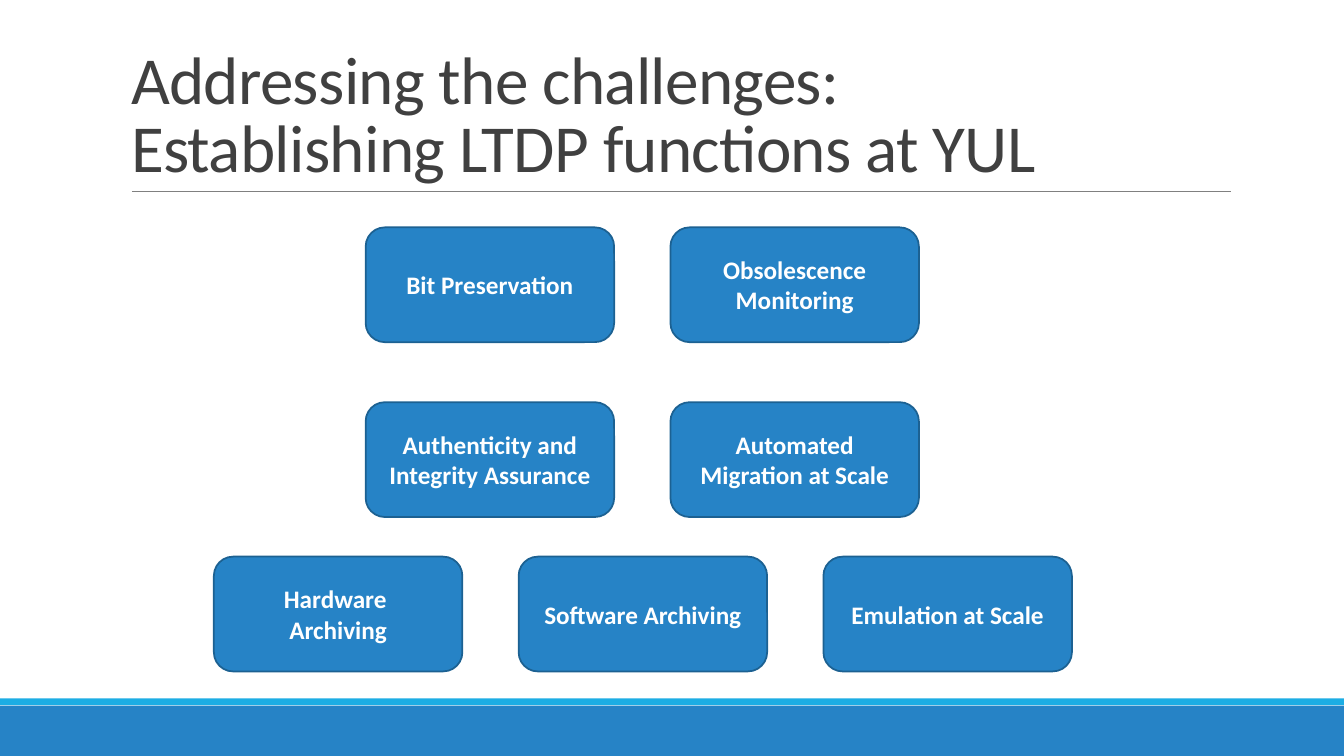
from pptx import Presentation
from pptx.dml.color import RGBColor
from pptx.enum import shapes, text
from pptx.oxml.ns import qn
from pptx.util import Pt
from lxml import etree

BLUE = RGBColor(0x26, 0x83, 0xC6)
CYAN = RGBColor(0x1C, 0xAD, 0xE4)
EDGE = RGBColor(0x1C, 0x61, 0x92)
GREY = RGBColor(0x80, 0x80, 0x80)
DARK = RGBColor(0x40, 0x40, 0x40)
WHITE = RGBColor(0xFF, 0xFF, 0xFF)


def add_filled(kind, left, top, width, height, fill):
    sp = s.shapes.add_shape(kind, Pt(left), Pt(top), Pt(width), Pt(height))
    sp.shadow.inherit = False
    sp.fill.solid()
    sp.fill.fore_color.rgb = fill
    sp.line.fill.background()
    return sp


def style_runs(p, size, color, bold):
    for r in p.runs:
        r.font.name = "Calibri"
        r.font.size = Pt(size)
        r.font.color.rgb = color
        r.font.bold = bold


prs = Presentation()
prs.slide_width, prs.slide_height = Pt(960), Pt(540)
s = prs.slides.add_slide(prs.slide_layouts[5])

# Footer bands and title rule
add_filled(shapes.MSO_SHAPE.RECTANGLE, 0, 504, 960, 36, BLUE)
add_filled(shapes.MSO_SHAPE.RECTANGLE, 0, 498.8, 960, 5, CYAN)
rule = s.shapes.add_connector(shapes.MSO_CONNECTOR.STRAIGHT,
                              Pt(94.3), Pt(136.8), Pt(879), Pt(136.8))
rule.line.color.rgb = GREY
rule.line.width = Pt(0.5)
etree.SubElement(rule._element.spPr, qn("a:effectLst"))

# Title
title = s.shapes.title
title.left, title.top, title.width, title.height = Pt(86.4), Pt(22.3), Pt(792), Pt(114.5)
tf = title.text_frame
tf.text = "Addressing the challenges: \vEstablishing LTDP functions at YUL"
tf.word_wrap = True
tf.auto_size = text.MSO_AUTO_SIZE.NONE
tf.vertical_anchor = text.MSO_ANCHOR.BOTTOM
p = tf.paragraphs[0]
p.alignment = text.PP_ALIGN.LEFT
p.line_spacing = 0.85
style_runs(p, 48, DARK, False)
for r in p.runs:
    r.font._element.set("spc", "-50")

# Function boxes: each row has a left edge, a top and its labels
BOX_W, BOX_H, PITCH = 177.5, 82, 217.7
rows = [
    (261.2, 162.4, ["Bit Preservation", "Obsolescence Monitoring"]),
    (261.2, 287.3, ["Authenticity and Integrity Assurance", "Automated Migration at Scale"]),
    (152.8, 397.6, ["Hardware \nArchiving", "Software Archiving", "Emulation at Scale"]),
]
for left, top, labels in rows:
    for i, label in enumerate(labels):
        sp = add_filled(shapes.MSO_SHAPE.ROUNDED_RECTANGLE,
                        left + i * PITCH, top, BOX_W, BOX_H, BLUE)
        sp.line.color.rgb = EDGE
        sp.line.width = Pt(1.25)
        tf = sp.text_frame
        tf.text = label
        tf.word_wrap = True
        tf.vertical_anchor = text.MSO_ANCHOR.MIDDLE
        for p in tf.paragraphs:
            p.alignment = text.PP_ALIGN.CENTER
            style_runs(p, 18, WHITE, True)

prs.save("out.pptx")
